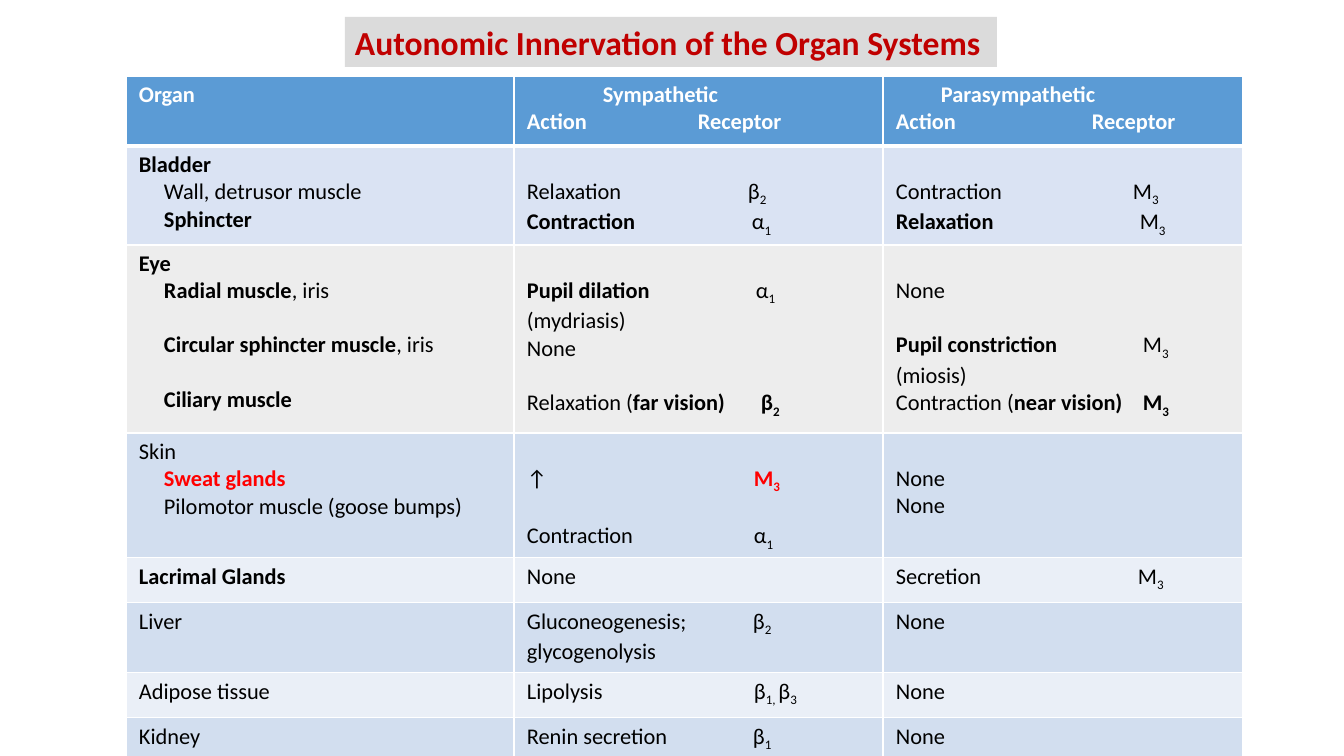
from dataclasses import dataclass

from lxml.etree import SubElement
from pptx import Presentation
from pptx.dml.color import RGBColor
from pptx.enum.shapes import MSO_SHAPE
from pptx.enum.text import MSO_ANCHOR, PP_ALIGN
from pptx.oxml import parse_xml
from pptx.oxml.ns import nsdecls, qn
from pptx.util import Emu, Pt

FONT = "Calibri"
BLACK, WHITE, RED, DARK_RED = "000000", "FFFFFF", "FF0000", "C00000"
HEADER_BLUE, TITLE_GRAY = "5B9BD5", "DBDBDB"
LINE_HEIGHT, ORGAN_INDENT = 27, 25
MARGIN_X, MARGIN_Y = 13, 5
COLUMN_WIDTHS = (388, 369, 360)


@dataclass(frozen=True)
class Span:
    text: str
    bold: bool = False
    color: str = BLACK
    subscript: bool = False


@dataclass(frozen=True)
class Line:
    spans: tuple[Span, ...]
    indent: int = 0
    tab: int = 0
    gap: int = 0


@dataclass(frozen=True)
class Row:
    height: int
    fill: str
    cells: tuple[tuple[Line, ...], ...]


def px(value: int) -> Emu:
    return Emu(round(value * 914400 / 100.8))


def rgb(color: str) -> RGBColor:
    return RGBColor.from_string(color)


def plain(text: str, bold: bool = False, indent: int = 0, gap: int = 0, color: str = BLACK) -> Line:
    return Line((Span(text, bold, color),), indent, gap=gap)


def organ(name: str, detail: str = "", bold: bool = True, color: str = BLACK, gap: int = 0) -> Line:
    spans = (Span(name, bold, color), Span(detail))
    return Line(spans if detail else spans[:1], ORGAN_INDENT, gap=gap)


def effect(action: str, receptor: str, number: str, tab: int, *, detail: str = "",
           bold: bool = False, strong: bool = False, color: str = BLACK,
           gap: int = 0, after: tuple[Span, ...] = ()) -> Line:
    spans = [Span(action, bold)]
    if detail:
        spans.append(Span(detail, True))
    spans += [Span("\t" + receptor, strong, color), Span(number, strong, color, True), *after]
    return Line(tuple(spans), tab=tab, gap=gap)


def heading(text: str, indent: int = 0, tab: int = 0) -> Line:
    return Line((Span(text, True, WHITE),), indent, tab)


NONE = plain("None")

ROWS = (
    Row(70, HEADER_BLUE, (
        (heading("Organ"),),
        (heading("Sympathetic", indent=76), heading("Action\tReceptor", tab=171)),
        (heading("Parasympathetic", indent=45), heading("Action\tReceptor", tab=196)),
    )),
    Row(99, "DAE3F3", (
        (plain("Bladder", True), organ("Wall, detrusor muscle", bold=False), organ("Sphincter")),
        (effect("Relaxation", "β", "2", 221, gap=1),
         effect("Contraction", "α", "1", 225, bold=True)),
        (effect("Contraction", "M", "3", 237, gap=1),
         effect("Relaxation", "M", "3", 244, bold=True)),
    )),
    Row(188, "EDEDED", (
        (plain("Eye", True), organ("Radial muscle", ", iris"),
         organ("Circular sphincter muscle", ", iris", gap=1), organ("Ciliary muscle", gap=1)),
        (effect("Pupil dilation", "α", "1", 229, bold=True, gap=1), plain("(mydriasis)"), NONE,
         effect("Relaxation (", "β", "2", 234, detail="far vision)", strong=True, gap=1)),
        (plain("None", gap=1), effect("Pupil constriction", "M", "3", 247, bold=True, gap=1),
         plain("(miosis)"),
         effect("Contraction (", "M", "3", 247, detail="near vision)", strong=True)),
    )),
    Row(125, "D2DEEF", (
        (plain("Skin"), organ("Sweat glands", color=RED),
         organ("Pilomotor muscle (goose bumps)", bold=False)),
        (effect("↑", "M", "3", 227, strong=True, color=RED, gap=1),
         effect("Contraction", "α", "1", 227, gap=1)),
        (plain("None", gap=1), NONE),
    )),
    Row(45, "EAEFF7", (
        (plain("Lacrimal Glands", True),), (NONE,), (effect("Secretion", "M", "3", 242),),
    )),
    Row(70, "D2DEEF", (
        (plain("Liver"),),
        (effect("Gluconeogenesis;", "β", "2 ", 226, after=(Span("glycogenolysis"),)),),
        (NONE,),
    )),
    Row(45, "EAEFF7", (
        (plain("Adipose tissue"),),
        (effect("Lipolysis", "β", "1, ", 227, after=(Span("β"), Span("3", subscript=True))),),
        (NONE,),
    )),
    Row(45, "D2DEEF", (
        (plain("Kidney"),), (effect("Renin secretion", "β", "1", 226),), (NONE,),
    )),
)


def add_text(paragraph, text: str, *, size: int = 16, bold: bool = False,
             color: str = BLACK, subscript: bool = False) -> None:
    run = paragraph.add_run()
    run.text = text
    run.font.name = FONT
    run.font.size = Pt(size)
    run.font.bold = bold
    run.font.color.rgb = rgb(color)
    if subscript:
        run.font._element.set("baseline", "-25000")


def add_line(paragraph, line: Line, first: bool) -> None:
    paragraph.alignment = PP_ALIGN.LEFT
    if line.gap and not first:
        paragraph.space_before = px(line.gap * LINE_HEIGHT)
    properties = paragraph._p.get_or_add_pPr()
    if line.indent:
        properties.set("marL", str(px(line.indent)))
        properties.set("indent", "0")
    if line.tab:
        tabs = SubElement(properties, qn("a:tabLst"))
        SubElement(tabs, qn("a:tab"), pos=str(px(line.tab)), algn="l")
    for span in line.spans:
        add_text(paragraph, span.text, bold=span.bold, color=span.color, subscript=span.subscript)


def set_borders(cell, top: int, bottom: int) -> None:
    properties = cell._tc.get_or_add_tcPr()
    for position, (side, width) in enumerate((("L", 1), ("R", 1), ("T", top), ("B", bottom))):
        properties.insert(position, parse_xml(
            f'<a:ln{side} {nsdecls("a")} w="{Pt(width)}"><a:solidFill>'
            f'<a:srgbClr val="{WHITE}"/></a:solidFill></a:ln{side}>'))


def fill_cell(cell, lines: tuple[Line, ...], fill: str, row_index: int) -> None:
    cell.fill.solid()
    cell.fill.fore_color.rgb = rgb(fill)
    set_borders(cell, 3 if row_index == 1 else 1, 3 if row_index == 0 else 1)
    cell.margin_left = cell.margin_right = px(MARGIN_X)
    cell.margin_top = px(MARGIN_Y + lines[0].gap * LINE_HEIGHT)
    cell.margin_bottom = px(MARGIN_Y)
    cell.vertical_anchor = MSO_ANCHOR.TOP
    frame = cell.text_frame
    for index, line in enumerate(lines):
        paragraph = frame.add_paragraph() if index else frame.paragraphs[0]
        add_line(paragraph, line, index == 0)


def add_organ_table(slide) -> None:
    shape = slide.shapes.add_table(len(ROWS), len(COLUMN_WIDTHS), px(126), px(76),
                                   px(sum(COLUMN_WIDTHS)), px(sum(row.height for row in ROWS)))
    table = shape.table
    for column, width in zip(table.columns, COLUMN_WIDTHS):
        column.width = px(width)
    for row_index, row in enumerate(ROWS):
        table.rows[row_index].height = px(row.height)
        for column_index, lines in enumerate(row.cells):
            fill_cell(table.cell(row_index, column_index), lines, row.fill, row_index)


def add_title(slide) -> None:
    shape = slide.shapes.add_shape(MSO_SHAPE.RECTANGLE, px(345), px(17), px(652), px(50))
    shape.shadow.inherit = False
    shape.fill.solid()
    shape.fill.fore_color.rgb = rgb(TITLE_GRAY)
    shape.line.fill.background()
    frame = shape.text_frame
    frame.word_wrap = True
    frame.vertical_anchor = MSO_ANCHOR.MIDDLE
    frame.margin_left, frame.margin_right = px(10), 0
    paragraph = frame.paragraphs[0]
    paragraph.alignment = PP_ALIGN.LEFT
    add_text(paragraph, "Autonomic Innervation of the Organ Systems", size=24, bold=True, color=DARK_RED)


def main() -> None:
    presentation = Presentation()
    presentation.slide_width, presentation.slide_height = px(1344), px(756)
    slide = presentation.slides.add_slide(presentation.slide_layouts[6])
    add_organ_table(slide)
    add_title(slide)
    presentation.save("out.pptx")


if __name__ == "__main__":
    main()
